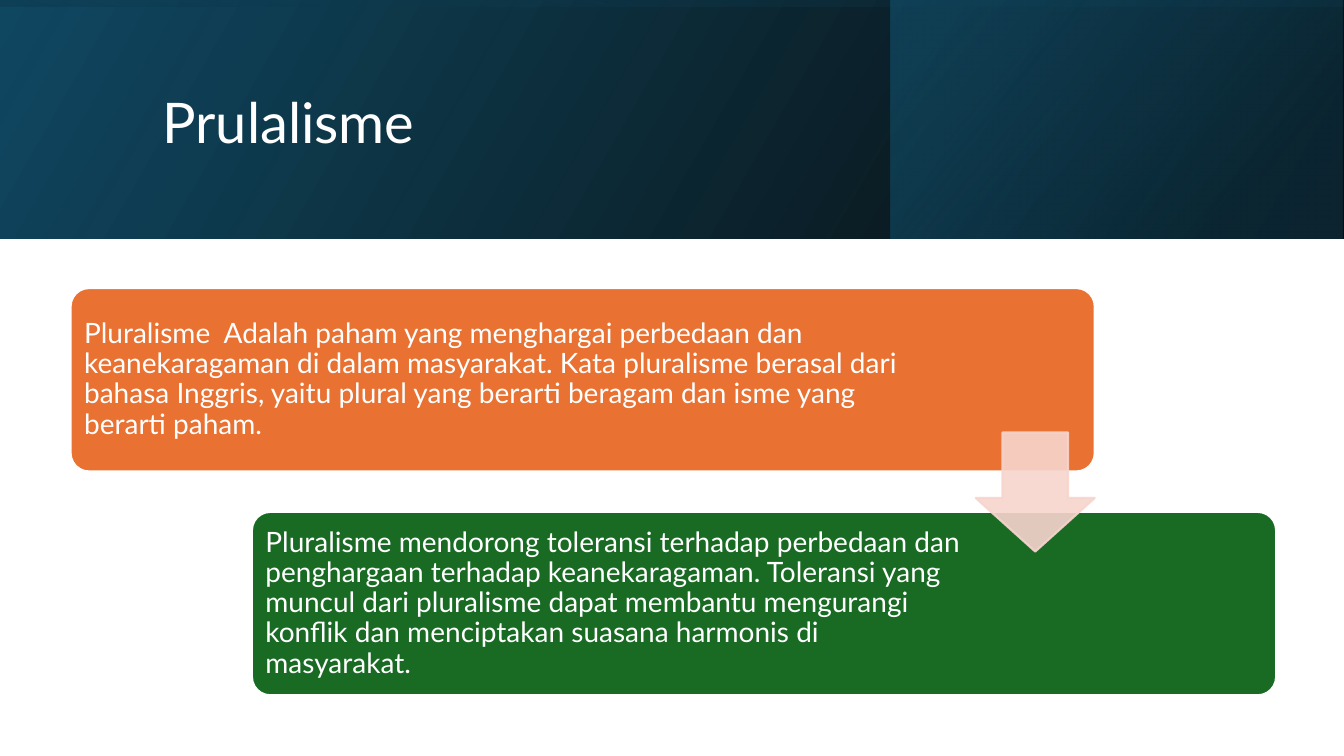
from lxml.etree import SubElement
from pptx import Presentation
from pptx.dml.color import RGBColor
from pptx.enum.shapes import MSO_SHAPE
from pptx.enum.text import MSO_ANCHOR, MSO_AUTO_SIZE, PP_ALIGN
from pptx.oxml.ns import qn
from pptx.util import Cm, Pt

# Content
TITLE = "Prulalisme"
CARDS = [  # text, fill colour, text width in cm
    ("Pluralisme  Adalah paham yang menghargai perbedaan dan keanekaragaman "
     "di dalam masyarakat. Kata pluralisme berasal dari bahasa Inggris, yaitu "
     "plural yang berarti beragam dan isme yang berarti paham.", "orange", 21.03),
    ("Pluralisme mendorong toleransi terhadap perbedaan dan penghargaan "
     "terhadap keanekaragaman. Toleransi yang muncul dari pluralisme dapat "
     "membantu mengurangi konflik dan menciptakan suasana harmonis di "
     "masyarakat.", "green", 17.98),
]

# Style and measures in cm
COLORS = {"white": "FFFFFF", "black": "000000", "orange": "E97132",
          "green": "196B24", "pink": "F7D5CE", "navy": "104862",
          "deep": "0B3041", "blue": "156082"}
FONT = "Lato"
WIDTH, HEIGHT = 33.87, 19.05
BAND = 6.02
PANEL = 11.38
CENTER = (WIDTH - BAND) / 2
BANDS = [  # box, rotation, gradient angle, stops (position, colour, opacity)
    ((0, 0, WIDTH, BAND), 0, 330, [(0, "black", 96), (100, "navy", 100)]),
    ((22.45, 0, PANEL, BAND), 0, 320, [(19, "deep", 68), (100, "blue", 48)]),
    ((CENTER, -CENTER, BAND, WIDTH), 270, 350,
     [(23, "navy", 16), (99, "black", 45)]),
]
TITLE_BOX = (3.84, 0.97, 27, 4.37)
CARD_LEFT, CARD_TOP, CARD_WIDTH, CARD_HEIGHT = 1.78, 7.26, 25.81, 4.62
STEP_X, STEP_Y = 4.57, 5.64
INSET = 0.14
ARROW_BOX = (24.59, 10.9, 3, 3)


def rgb(name):
    return RGBColor.from_string(COLORS[name])


def lengths(box):
    return [Cm(value) for value in box]


def add_shape(kind, box, fill=None, line=None):
    shape = slide.shapes.add_shape(kind, *lengths(box))
    shape.shadow.inherit = False
    if fill:
        shape.fill.solid()
        shape.fill.fore_color.rgb = rgb(fill)
    if line:
        shape.line.color.rgb = rgb(line)
        shape.line.width = Pt(1.5)
    else:
        shape.line.fill.background()
    return shape


def set_opacity(color, percent):
    SubElement(color, qn("a:alpha"), val=str(percent * 1000))


def set_gradient(shape, angle, stops):
    shape.fill.gradient()
    gradient = shape._element.spPr.find(qn("a:gradFill"))
    for child in list(gradient):
        gradient.remove(child)
    stop_list = SubElement(gradient, qn("a:gsLst"))
    for position, name, opacity in stops:
        stop = SubElement(stop_list, qn("a:gs"), pos=str(position * 1000))
        color = SubElement(stop, qn("a:srgbClr"), val=COLORS[name])
        set_opacity(color, opacity)
    SubElement(gradient, qn("a:lin"), ang=str(angle * 60000), scaled="0")


def write_text(shape, text, size, margins=None):
    frame = shape.text_frame
    frame.text = text
    paragraph = frame.paragraphs[0]
    frame_format = {"word_wrap": True, "auto_size": MSO_AUTO_SIZE.NONE,
                    "vertical_anchor": MSO_ANCHOR.MIDDLE, **(margins or {})}
    formats = [
        (frame, frame_format),
        (paragraph, {"alignment": PP_ALIGN.LEFT, "line_spacing": 0.9}),
        (paragraph.runs[0].font, {"name": FONT, "size": Pt(size)}),
    ]
    for target, values in formats:
        for name, value in values.items():
            setattr(target, name, value)
    paragraph.runs[0].font.color.rgb = rgb("white")


presentation = Presentation()
presentation.slide_width, presentation.slide_height = Cm(WIDTH), Cm(HEIGHT)
slide = presentation.slides.add_slide(presentation.slide_layouts[5])

# Header bands
for box, rotation, angle, stops in BANDS:
    band = add_shape(MSO_SHAPE.RECTANGLE, box)
    band.rotation = rotation
    band._element.spPr.find(qn("a:xfrm")).set("flipH", "1")
    set_gradient(band, angle, stops)

# Title, brought in front of the bands
title = slide.shapes.title
title.left, title.top, title.width, title.height = lengths(TITLE_BOX)
write_text(title, TITLE, 40)
slide.shapes._spTree.append(title._element)

# Staggered cards
card_margins = {f"margin_{side}": Cm(0.2)
                for side in ("left", "top", "right", "bottom")}
for index, (text, fill, text_width) in enumerate(CARDS):
    left, top = CARD_LEFT + index * STEP_X, CARD_TOP + index * STEP_Y
    card = add_shape(MSO_SHAPE.ROUNDED_RECTANGLE,
                     (left, top, CARD_WIDTH, CARD_HEIGHT), fill, "white")
    card.adjustments[0] = 0.1
    text_box = slide.shapes.add_textbox(*lengths(
        (left + INSET, top + INSET, text_width, CARD_HEIGHT - 2 * INSET)))
    write_text(text_box, text, 20, card_margins)

# Arrow between the cards
arrow = add_shape(MSO_SHAPE.DOWN_ARROW, ARROW_BOX, "pink", "pink")
arrow.adjustments[0], arrow.adjustments[1] = 0.55, 0.45
for color in arrow._element.spPr.iter(qn("a:srgbClr")):
    set_opacity(color, 90)

presentation.save("out.pptx")
